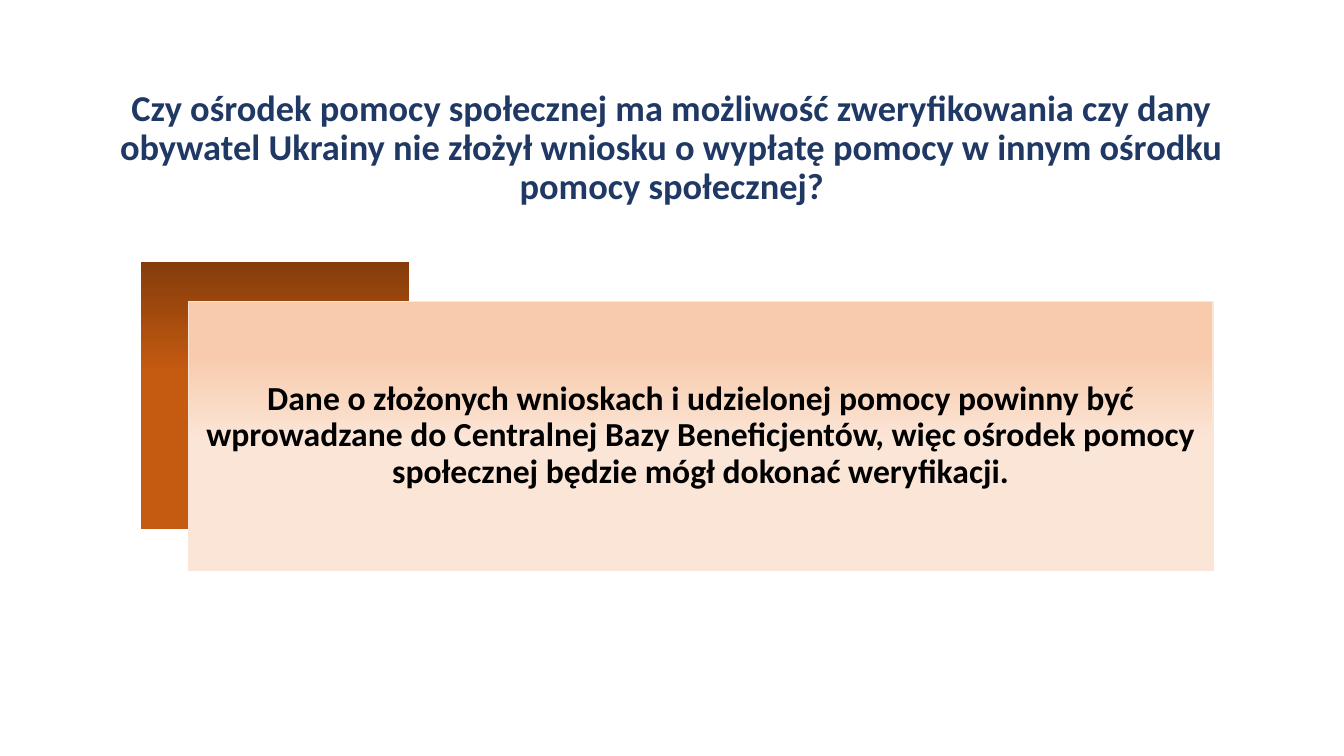
from dataclasses import dataclass

from pptx import Presentation
from pptx.dml.color import RGBColor
from pptx.enum.shapes import MSO_SHAPE as Shape
from pptx.enum.text import MSO_ANCHOR as Anchor, MSO_AUTO_SIZE as AutoSize, PP_ALIGN as Align
from pptx.slide import Slide
from pptx.text.text import TextFrame
from pptx.util import Inches, Pt

TITLE = (
    "Czy ośrodek pomocy społecznej ma możliwość zweryfikowania czy dany "
    "obywatel Ukrainy nie złożył wniosku o wypłatę pomocy w innym ośrodku "
    "pomocy społecznej?"
)
ANSWER = (
    "Dane o złożonych wnioskach i udzielonej pomocy powinny być "
    "wprowadzane do Centralnej Bazy Beneficjentów, więc ośrodek pomocy "
    "społecznej będzie mógł dokonać weryfikacji."
)


@dataclass(frozen=True)
class Panel:
    left: float
    top: float
    width: float
    height: float
    stops: tuple[tuple[float, str], ...]
    line: str
    text: str = ""


PANELS = (
    Panel(1.39, 2.59, 2.67, 2.67, ((0, "843C0B"), (0.41, "C55A11")), "FFFFFF"),
    Panel(1.87, 2.99, 10.16, 2.67, ((0.2, "F8CBAD"), (0.52, "FBE5D6")), "FBE5D6", ANSWER),
)


def color(value: str) -> RGBColor:
    return RGBColor.from_string(value)


def write_text(frame: TextFrame, text: str, size: float, font_color: str) -> None:
    frame.text = text
    frame.word_wrap = True
    frame.auto_size = AutoSize.NONE
    frame.vertical_anchor = Anchor.MIDDLE
    paragraph = frame.paragraphs[0]
    paragraph.alignment = Align.CENTER
    paragraph.line_spacing = 0.9
    paragraph.space_before = Pt(0)
    font = paragraph.runs[0].font
    font.name = "Calibri"
    font.size = Pt(size)
    font.bold = True
    font.color.rgb = color(font_color)


def add_title(slide: Slide) -> None:
    title = slide.shapes.title
    title.left, title.top = Inches(0.6), Inches(0.9)
    title.width, title.height = Inches(12.13), Inches(1.15)
    write_text(title.text_frame, TITLE, 26, "203864")


def add_panel(slide: Slide, panel: Panel) -> None:
    box = map(Inches, (panel.left, panel.top, panel.width, panel.height))
    shape = slide.shapes.add_shape(Shape.RECTANGLE, *box)
    shape.shadow.inherit = False
    shape.fill.gradient()
    shape.fill.gradient_angle = 270
    for stop, (position, stop_color) in zip(shape.fill.gradient_stops, panel.stops):
        stop.position = position
        stop.color.rgb = color(stop_color)
    shape.line.color.rgb = color(panel.line)
    shape.line.width = Pt(1)
    if panel.text:
        frame = shape.text_frame
        frame.margin_left = frame.margin_right = Inches(0.1)
        frame.margin_top = frame.margin_bottom = Inches(0.1)
        write_text(frame, panel.text, 24, "000000")


def main() -> None:
    """Build the slide with a question as its title and the answer in a panel."""
    presentation = Presentation()
    presentation.slide_width = Inches(13.33)
    presentation.slide_height = Inches(7.5)
    slide = presentation.slides.add_slide(presentation.slide_layouts[5])
    add_title(slide)
    for panel in PANELS:
        add_panel(slide, panel)
    presentation.save("out.pptx")


if __name__ == "__main__":
    main()
